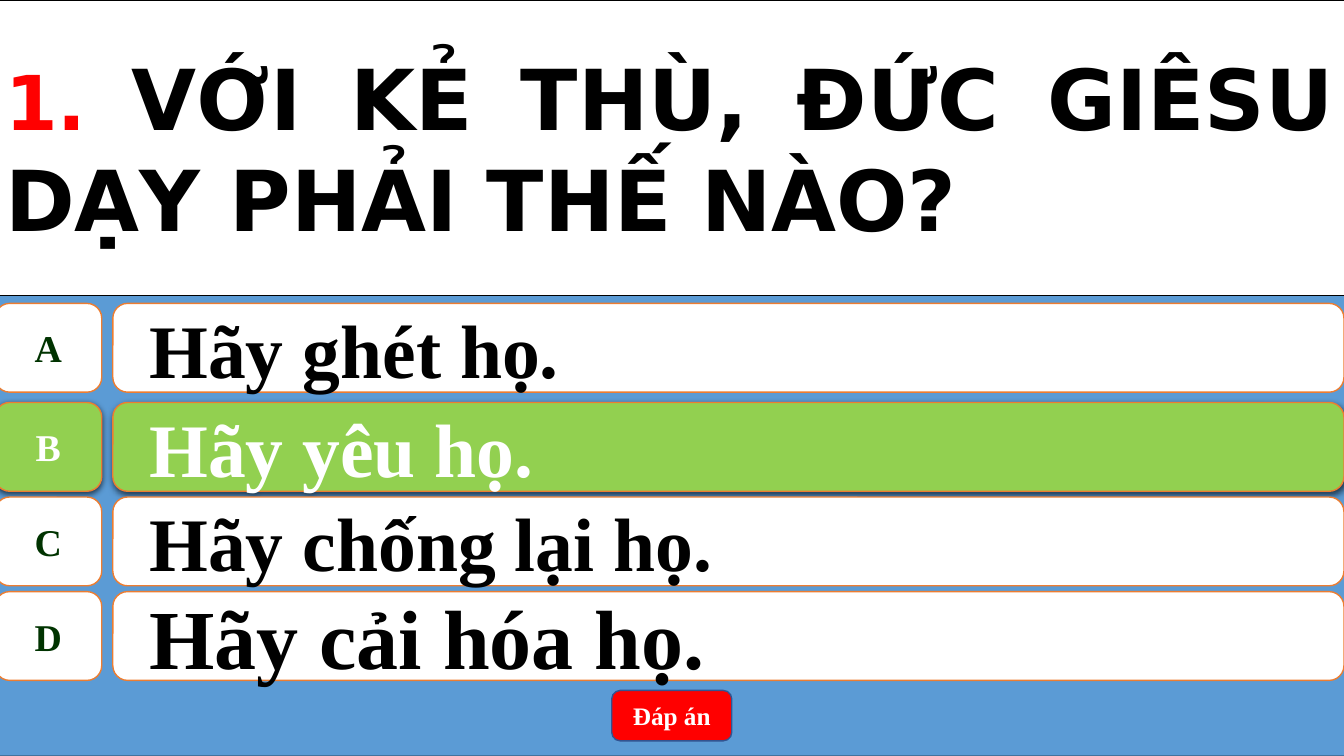
import pptx
import pptx.dml.color
import pptx.enum.shapes
import pptx.enum.text
import pptx.oxml
import pptx.util
from pptx.oxml.ns import nsdecls

Pt = pptx.util.Pt
RGBColor = pptx.dml.color.RGBColor
Shape = pptx.enum.shapes.MSO_SHAPE
Align = pptx.enum.text.PP_ALIGN

# Content: answers are letter, text, text size, top, correct or not
NUMBER = "1. "
QUESTION = "VỚI KẺ THÙ, ĐỨC GIÊSU DẠY PHẢI THẾ NÀO?"
ANSWERS = [
    ("A", "Hãy ghét họ.", 54, 216.7, False),
    ("B", "Hãy yêu họ.", 54, 287.5, True),
    ("C", "Hãy chống lại họ.", 54, 355, False),
    ("D", "Hãy cải hóa họ.", 60, 422.6, False),
]
BUTTON = "Đáp án"

# Colours and fonts
WHITE = RGBColor(0xFF, 0xFF, 0xFF)
BLACK = RGBColor(0x00, 0x00, 0x00)
RED = RGBColor(0xFF, 0x00, 0x00)
BLUE = RGBColor(0x5B, 0x9B, 0xD5)
BLUE_EDGE = RGBColor(0x43, 0x73, 0x9E)
BUTTON_EDGE = RGBColor(0x32, 0x54, 0x91)
ORANGE = RGBColor(0xED, 0x7D, 0x31)
GREEN = RGBColor(0x92, 0xD0, 0x50)
DARK_GREEN = RGBColor(0x00, 0x33, 0x00)
SERIF = "Times New Roman"
SANS = "DejaVu Sans"

# Layout in points
PAGE_WIDTH, PAGE_HEIGHT = 960, 540
LEFT, FULL_WIDTH = -3.6, 964
QUESTION_HEIGHT = 211
ROW_HEIGHT = 63.4
LETTER_WIDTH = 76.3
ANSWER_LEFT = 80.6
ANSWER_WIDTH = PAGE_WIDTH - ANSWER_LEFT

deck = pptx.Presentation()
deck.slide_width, deck.slide_height = Pt(PAGE_WIDTH), Pt(PAGE_HEIGHT)
page = deck.slides.add_slide(deck.slide_layouts[5])


def paint(box, fill, edge):
    box.fill.solid()
    box.fill.fore_color.rgb = fill
    box.line.color.rgb = edge
    box.line.width = Pt(1)


def add_box(kind, left, top, width, height, fill, edge):
    box = page.shapes.add_shape(kind, Pt(left), Pt(top), Pt(width), Pt(height))
    box.shadow.inherit = False
    paint(box, fill, edge)
    return box


def write(box, spans, align, wrap=True):
    """Fill a box with spans of (text, size, font, colour)."""
    frame = box.text_frame
    frame.word_wrap = wrap
    frame.auto_size = pptx.enum.text.MSO_AUTO_SIZE.NONE
    frame.vertical_anchor = pptx.enum.text.MSO_ANCHOR.MIDDLE
    para = frame.paragraphs[0]
    para.alignment = align
    para.line_spacing = 1.0
    for text, size, font, colour in spans:
        span = para.add_run()
        span.text = text
        span.font.size = Pt(size)
        span.font.name = font
        span.font.bold = True
        span.font.color.rgb = colour
    return para


def drop_shadow(box):
    properties = box.element.spPr
    properties.remove(properties.find(pptx.oxml.ns.qn("a:effectLst")))
    properties.append(pptx.oxml.parse_xml(
        f'<a:effectLst {nsdecls("a")}>'
        f'<a:outerShdw blurRad="{Pt(4.5)}" dist="{Pt(1.5)}" dir="5400000"'
        ' rotWithShape="0"><a:srgbClr val="000000"><a:alpha val="63000"/>'
        '</a:srgbClr></a:outerShdw></a:effectLst>'))


# Blue backdrop
add_box(Shape.RECTANGLE, LEFT, 0, FULL_WIDTH, PAGE_HEIGHT, BLUE, BLUE_EDGE)

# Answer rows
for letter, answer, size, top, correct in ANSWERS:
    fill = GREEN if correct else WHITE
    tag = add_box(Shape.FLOWCHART_ALTERNATE_PROCESS, LEFT, top,
                  LETTER_WIDTH, ROW_HEIGHT, fill, ORANGE)
    write(tag, [(letter, 27, SERIF, WHITE if correct else DARK_GREEN)],
          Align.CENTER, wrap=False)
    bar = add_box(Shape.ROUNDED_RECTANGLE, ANSWER_LEFT, top,
                  ANSWER_WIDTH, ROW_HEIGHT, fill, ORANGE)
    para = write(bar, [(answer, size, SERIF, WHITE if correct else BLACK)],
                 Align.LEFT)
    indents = para._p.get_or_add_pPr()
    indents.set("marL", str(Pt(36)))
    indents.set("indent", str(Pt(-20)))
    if correct:
        drop_shadow(tag)
        drop_shadow(bar)

# Answer button
button = add_box(Shape.ROUNDED_RECTANGLE, 437, 493.2, 85.7, 36, RED, BUTTON_EDGE)
write(button, [(BUTTON, 18, SERIF, WHITE)], Align.CENTER)

# Question, in front of the backdrop
title = page.shapes.title
title.left, title.top = Pt(LEFT), Pt(0)
title.width, title.height = Pt(FULL_WIDTH), Pt(QUESTION_HEIGHT)
paint(title, WHITE, BLACK)
write(title, [(NUMBER, 54, SANS, RED), (QUESTION, 60, SANS, BLACK)], Align.JUSTIFY)
title.element.getparent().append(title.element)

deck.save("out.pptx")
